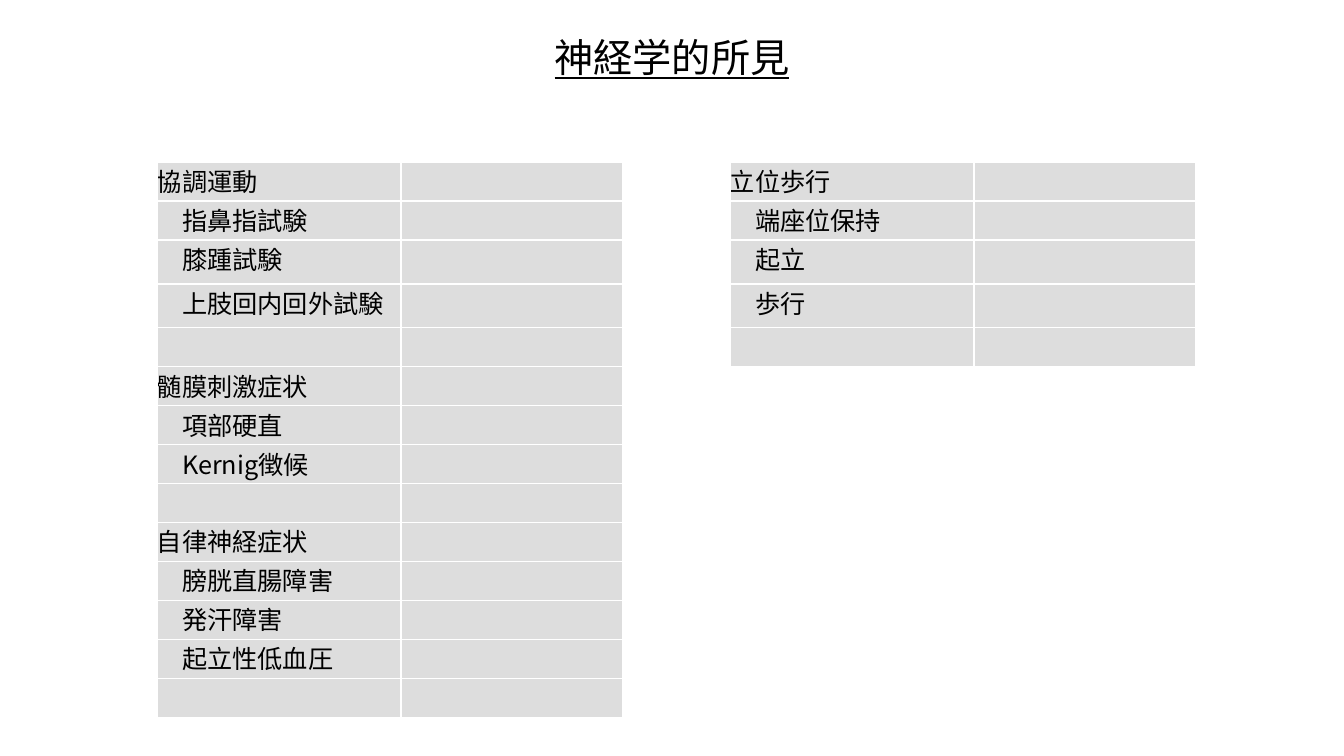
from lxml.etree import SubElement
from pptx import Presentation
from pptx.dml.color import RGBColor
from pptx.enum.text import MSO_ANCHOR as Anchor, MSO_AUTO_SIZE as AutoSize, PP_ALIGN as Align
from pptx.oxml import parse_xml
from pptx.oxml.ns import nsdecls, qn
from pptx.util import Pt

EMU_PER_PX = 914400 / 100.8
TITLE_ONLY = 5


def px(length):
    return round(length * EMU_PER_PX)


def color(hex_string):
    return RGBColor.from_string(hex_string)


class FindingsSlide:
    font_name = "Noto Sans CJK JP"
    text_color = "000000"
    cell_color = "DDDDDD"
    border_color = "FFFFFF"

    def __init__(self, presentation):
        self.slide = presentation.slides.add_slide(presentation.slide_layouts[TITLE_ONLY])

    def style(self, paragraph, size):
        font = paragraph.font
        font.size = Pt(size)
        font.color.rgb = color(self.text_color)
        font.name = self.font_name
        properties = paragraph._p.pPr.find(qn("a:defRPr"))
        SubElement(properties, qn("a:ea")).set("typeface", self.font_name)

    def title(self, text, left, top, width, height):
        shape = self.slide.shapes.title
        shape.left, shape.top, shape.width, shape.height = map(px, (left, top, width, height))
        frame = shape.text_frame
        frame.text = text
        frame.auto_size = AutoSize.NONE
        frame.vertical_anchor = Anchor.MIDDLE
        frame.margin_left = frame.margin_right = frame.margin_top = frame.margin_bottom = px(5)
        paragraph = frame.paragraphs[0]
        paragraph.alignment = Align.CENTER
        self.style(paragraph, 28)
        paragraph.font.underline = True

    def borders(self, cell):
        properties = cell._tc.get_or_add_tcPr()
        for index, side in enumerate(("lnL", "lnR", "lnT", "lnB")):
            properties.insert(index, parse_xml(
                f'<a:{side} {nsdecls("a")} w="{Pt(1)}"><a:solidFill>'
                f'<a:srgbClr val="{self.border_color}"/></a:solidFill></a:{side}>'))

    def cell(self, cell, text):
        cell.margin_left = cell.margin_right = cell.margin_top = cell.margin_bottom = 0
        cell.fill.solid()
        cell.fill.fore_color.rgb = color(self.cell_color)
        self.borders(cell)
        cell.text = text
        self.style(cell.text_frame.paragraphs[0], 18)

    def table(self, labels, left, top, widths, heights):
        frame = self.slide.shapes.add_table(
            len(labels), len(widths), px(left), px(top), px(sum(widths)), px(sum(heights)))
        table = frame.table
        table.first_row = table.horz_banding = False
        for column, width in zip(table.columns, widths):
            column.width = px(width)
        for index, (label, height) in enumerate(zip(labels, heights)):
            table.rows[index].height = px(height)
            self.cell(table.cell(index, 0), label)
            self.cell(table.cell(index, 1), "")


# Findings, one label per row; an empty row closes each group
GAIT = ["立位歩行", "　端座位保持", "　起立", "　歩行", ""]
COORDINATION = ["協調運動", "　指鼻指試験", "　膝踵試験", "　上肢回内回外試験", ""]
MENINGEAL = ["髄膜刺激症状", "　項部硬直", "　Kernig徴候", ""]
AUTONOMIC = ["自律神経症状", "　膀胱直腸障害", "　発汗障害", "　起立性低血圧", ""]

TABLE_TOP = 162
COLUMN_WIDTHS = (244, 222)
ROW_HEIGHT, TALL_ROW_HEIGHT = 39, 44
TALL_ROWS = (2, 3)


def main():
    presentation = Presentation()
    presentation.slide_width, presentation.slide_height = px(1344), px(756)
    page = FindingsSlide(presentation)

    # Heading
    page.title("神経学的所見", 507, 10, 330, 93)

    # Right and left tables
    for left, labels in ((730, GAIT), (157, COORDINATION + MENINGEAL + AUTONOMIC)):
        heights = [TALL_ROW_HEIGHT if row in TALL_ROWS else ROW_HEIGHT
                   for row in range(len(labels))]
        page.table(labels, left, TABLE_TOP, COLUMN_WIDTHS, heights)

    presentation.save("out.pptx")


if __name__ == "__main__":
    main()
